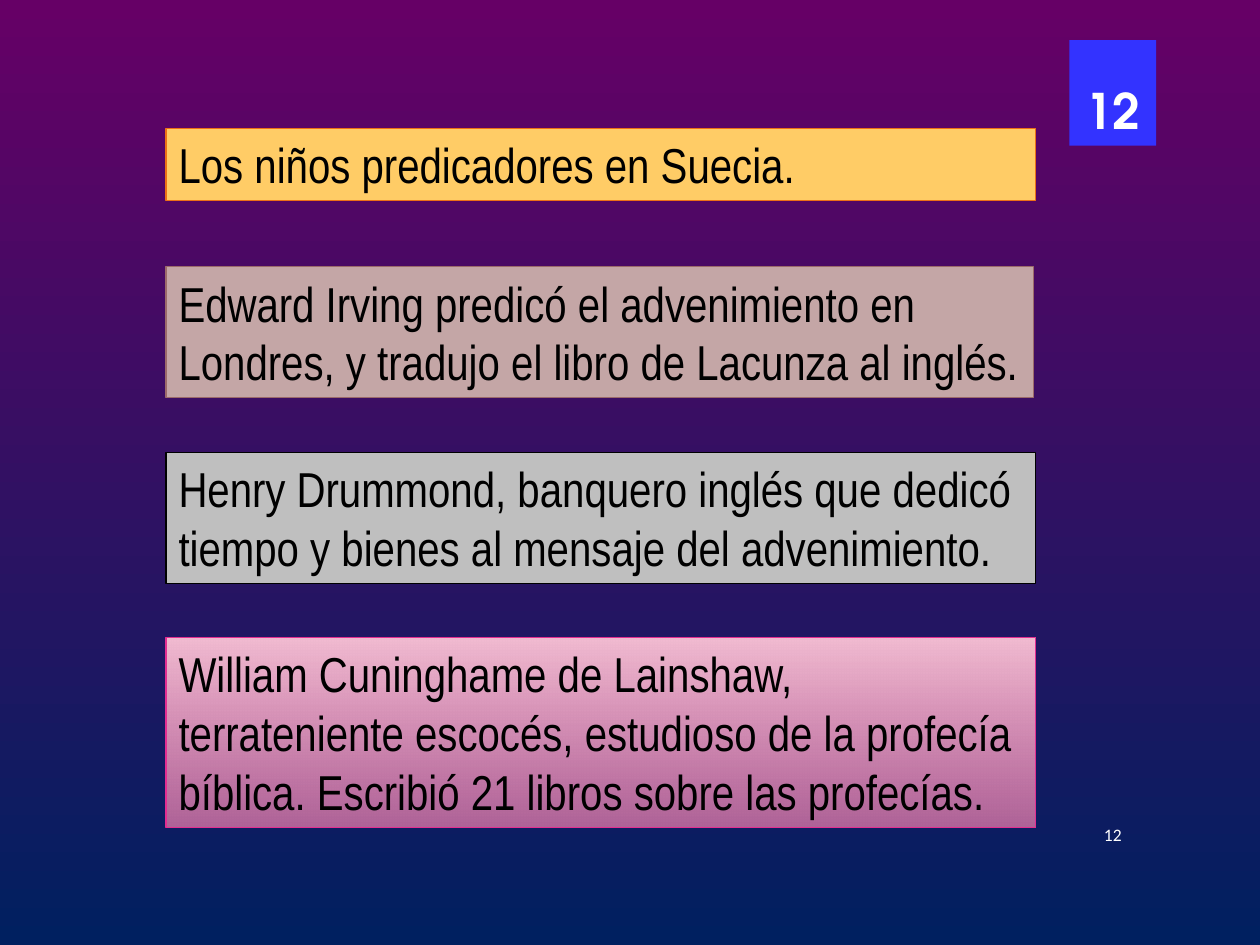
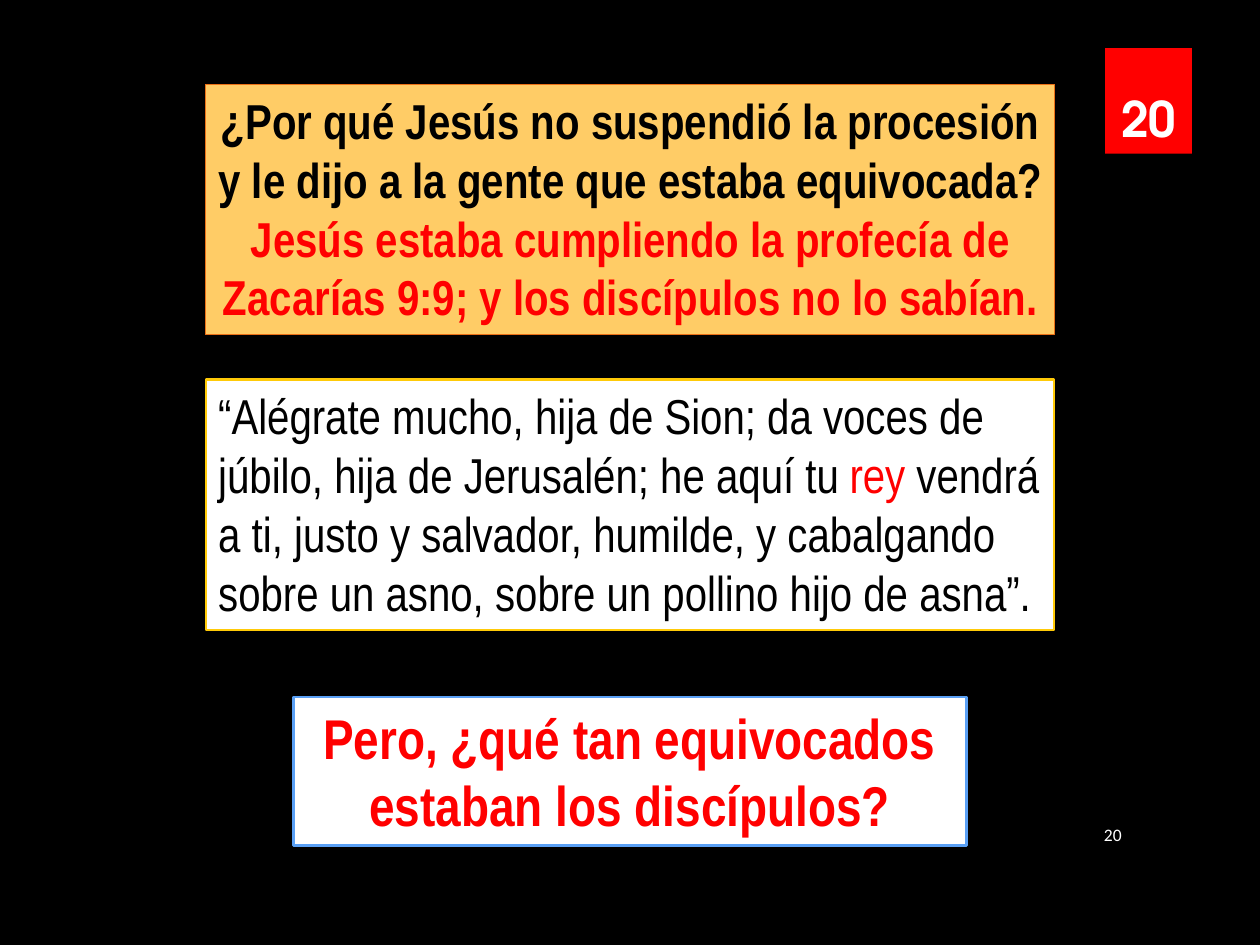
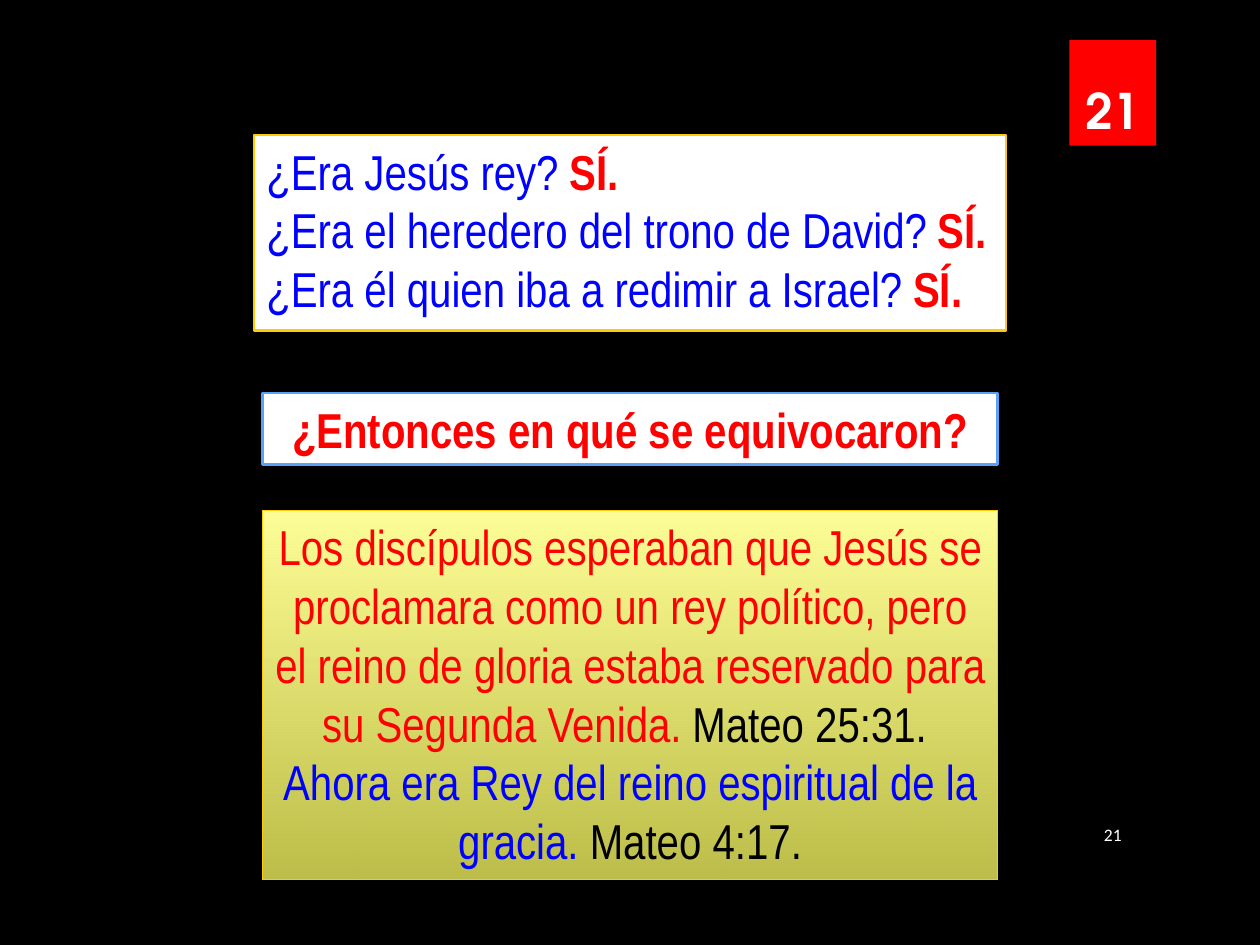
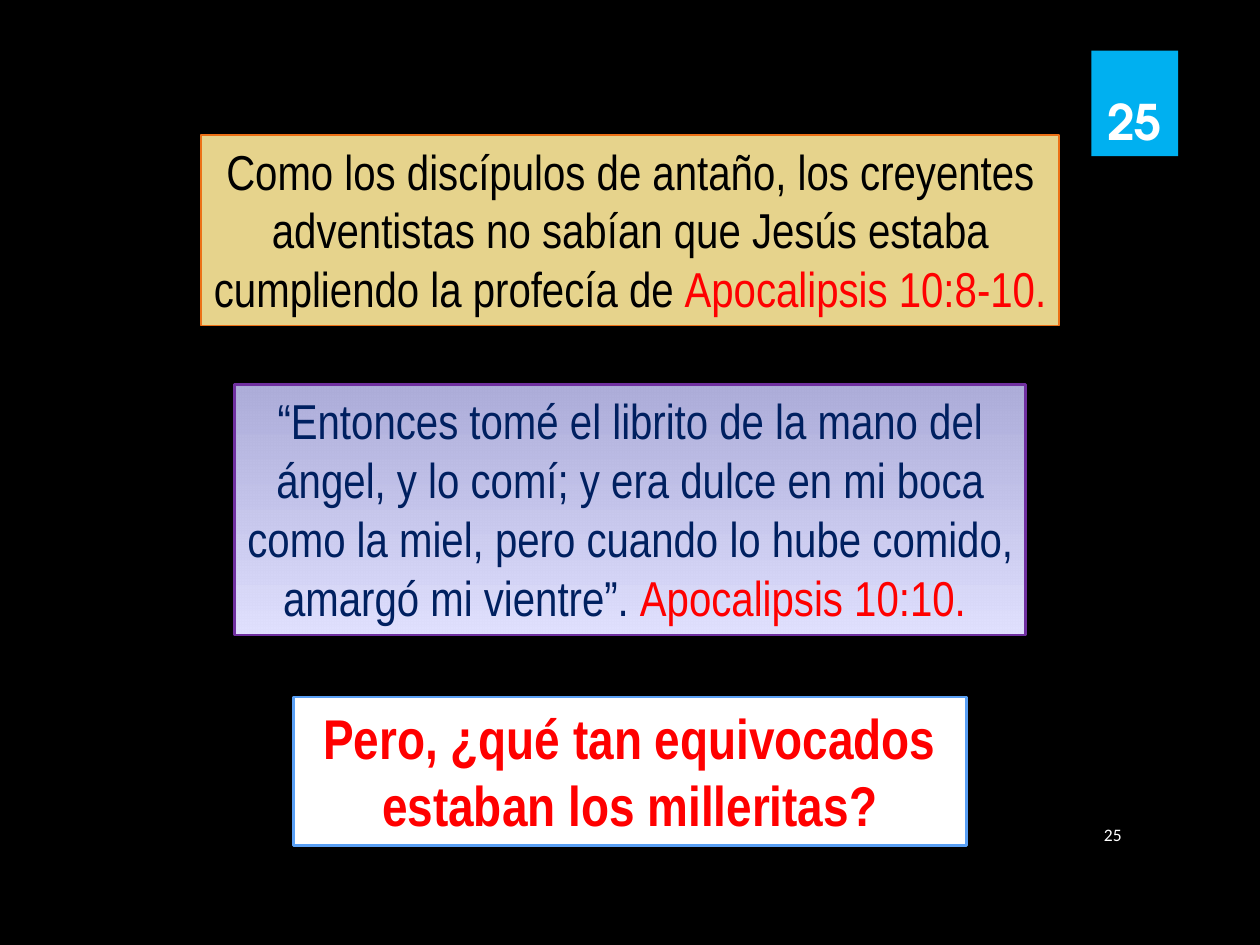
from lxml import etree
from pptx import Presentation
from pptx.dml.color import RGBColor
from pptx.enum.shapes import MSO_SHAPE
from pptx.enum.text import MSO_ANCHOR, MSO_AUTO_SIZE, PP_ALIGN
from pptx.oxml.ns import qn
from pptx.util import Cm, Pt

RECTANGLE = MSO_SHAPE.RECTANGLE
TOP, MIDDLE, BOTTOM = MSO_ANCHOR.TOP, MSO_ANCHOR.MIDDLE, MSO_ANCHOR.BOTTOM
LEFT, CENTER, RIGHT = PP_ALIGN.LEFT, PP_ALIGN.CENTER, PP_ALIGN.RIGHT
GROW = MSO_AUTO_SIZE.SHAPE_TO_FIT_TEXT

SLIDE_WIDTH, SLIDE_HEIGHT = 25.4, 19.05
BODY_FONT, NUMBER_FONT, BADGE_FONT = "Arial Narrow", "Calibri", "TeX Gyre Adventor"
DOWNWARD = 270
BLANK_LAYOUT = 6

COLORS = {
    "black": "000000", "white": "FFFFFF", "red": "FF0000", "blue": "0000FF",
    "navy": "002060", "purple": "660066", "violet": "7030A0", "royal": "3333FF",
    "cyan": "00B0F0", "sky": "5AA0F5", "amber": "FFCC66", "orange": "EC7016",
    "gold": "FFCA08", "cream": "FFEA9C", "rose": "C4A6A6", "brown": "9C6A6A",
    "gray": "BFBFBF", "magenta": "E32D91", "light pink": "F2BBD1",
    "pink": "E87DAC", "light yellow": "FFFF99", "yellow": "FFFF66",
    "lavender": "CCCCFF", "light lavender": "E1E1FF",
}


def rgb(name):
    return RGBColor.from_string(COLORS[name])


def set_alpha(parent, percent):
    color = next(parent.iter(qn("a:srgbClr")))
    etree.SubElement(color, qn("a:alpha"), val=str(percent * 1000))


def paint(fill, stops):
    """Fill with one (color, opacity) pair, or with a downward gradient of two."""
    if len(stops) == 1:
        fill.solid()
        targets = [fill]
    else:
        fill.gradient()
        fill.gradient_angle = DOWNWARD
        targets = list(fill.gradient_stops)
    for position, (target, (color, opacity)) in enumerate(zip(targets, stops)):
        if len(stops) == 1:
            target.fore_color.rgb = rgb(color)
            node = target._xPr
        else:
            target.color.rgb = rgb(color)
            target.position = position
            node = target._gs
        if opacity < 100:
            set_alpha(node, opacity)


def solid(color, opacity=100):
    return [(color, opacity)]


def outline_text(run, color, width):
    outline = etree.Element(qn("a:ln"), w=str(Pt(width)))
    fill = etree.SubElement(outline, qn("a:solidFill"))
    etree.SubElement(fill, qn("a:srgbClr"), val=COLORS[color])
    run._r.get_or_add_rPr().insert(0, outline)


def add_run(paragraph, text, color, size, font=BODY_FONT, bold=False, outline=0):
    run = paragraph.add_run()
    run.text = text
    for attribute, value in {"name": font, "size": Pt(size), "bold": bold}.items():
        setattr(run.font, attribute, value)
    run.font.color.rgb = rgb(color)
    if outline:
        outline_text(run, color, outline)


def add_rectangle(slide, box, fill, border=None, border_width=0.75):
    rectangle = slide.shapes.add_shape(RECTANGLE, *map(Cm, box))
    rectangle.shadow.inherit = False
    paint(rectangle.fill, fill)
    if border:
        rectangle.line.color.rgb = rgb(border)
        rectangle.line.width = Pt(border_width)
    else:
        rectangle.line.fill.background()
    return rectangle


def format_frame(frame, **values):
    for attribute, value in {"word_wrap": True, **values}.items():
        setattr(frame, attribute, value)


def add_panel(slide, top, width, height, fill, border, paragraphs, left=None,
              border_width=0.75, align=CENTER, size=28, bold=False, outline=1.5):
    """Add a statement panel, centred across the slide unless left is given.

    Each paragraph is a list of (text, color) runs, with an optional bold flag.
    """
    if left is None:
        left = (SLIDE_WIDTH - width) / 2
    panel = add_rectangle(slide, (left, top, width, height), fill, border, border_width)
    frame = panel.text_frame
    format_frame(frame, vertical_anchor=TOP, auto_size=GROW)
    for index, runs in enumerate(paragraphs):
        paragraph = frame.add_paragraph() if index else frame.paragraphs[0]
        paragraph.alignment = align
        for text, color, *emphasis in runs:
            add_run(paragraph, text, color, size, bold=bold or bool(emphasis),
                    outline=outline)


def add_question(slide, text, top=14.05, width=13.56, height=3, size=32):
    add_panel(slide, top, width, height, solid("white"), "sky", [[(text, "red")]],
              border_width=1.5, size=size, bold=True)


def add_page_marks(slide, number, badge_left, badge_top, badge_color):
    """Add the small page number and the coloured number badge."""
    page_number = slide.shapes.add_textbox(*map(Cm, (21.69, 16.31, 1.17, 1.04)))
    badge = add_rectangle(slide, (badge_left, badge_top, 1.75, 2.13), solid(badge_color))
    marks = ((page_number, MIDDLE, RIGHT, 10, NUMBER_FONT, False),
             (badge, BOTTOM, CENTER, 28, BADGE_FONT, True))
    for mark, anchor, align, size, font, bold in marks:
        format_frame(mark.text_frame, vertical_anchor=anchor)
        paragraph = mark.text_frame.paragraphs[0]
        paragraph.alignment = align
        add_run(paragraph, str(number), "white", size, font, bold)


def add_slide(prs, background):
    slide = prs.slides.add_slide(prs.slide_layouts[BLANK_LAYOUT])
    paint(slide.background.fill, background)
    return slide


def build_preachers(prs):
    slide = add_slide(prs, [("purple", 100), ("navy", 100)])
    preachers = (
        (2.59, 17.53, 1.45, solid("amber"), "orange",
         "Los niños predicadores en Suecia."),
        (5.38, 17.48, 2.64, solid("rose"), "brown",
         "Edward Irving predicó el advenimiento en Londres, y tradujo el libro "
         "de Lacunza al inglés."),
        (9.12, 17.53, 2.64, solid("gray"), "black",
         "Henry Drummond, banquero inglés que dedicó tiempo y bienes al mensaje "
         "del advenimiento."),
        (12.85, 17.53, 3.84, [("light pink", 100), ("pink", 74)], "magenta",
         "William Cuninghame de Lainshaw, terrateniente escocés, estudioso de la "
         "profecía bíblica. Escribió 21 libros sobre las profecías."),
    )
    for top, width, height, fill, border, text in preachers:
        add_panel(slide, top, width, height, fill, border, [[(text, "black")]],
                  left=3.35, align=LEFT)
    add_page_marks(slide, 12, 21.56, 0.81, "royal")


def build_procession(prs):
    slide = add_slide(prs, solid("black"))
    add_panel(slide, 1.7, 17.12, 5.05, solid("amber"), "orange", [[
        ("¿Por qué Jesús no suspendió la procesión y le dijo a la gente que "
         "estaba equivocada? ", "black"),
        ("Jesús estaba cumpliendo la profecía de Zacarías 9:9; y los discípulos "
         "no lo sabían.", "red"),
    ]], bold=True, outline=0.25)
    add_panel(slide, 7.65, 17.1, 5.05, solid("white"), "gold", [[
        ("“Alégrate mucho, hija de Sion; da voces de júbilo, hija de Jerusalén; "
         "he aquí tu ", "black"),
        ("rey", "red"),
        (" vendrá a ti, justo y salvador, humilde, y cabalgando sobre un asno, "
         "sobre un pollino hijo de asna”.", "black"),
    ]], border_width=1.5, align=LEFT)
    add_question(slide, "Pero, ¿qué tan equivocados estaban los discípulos?")
    add_page_marks(slide, 20, 22.28, 0.97, "red")


def build_kingdom(prs):
    slide = add_slide(prs, solid("black"))
    questions = ("¿Era Jesús rey? ", "¿Era el heredero del trono de David? ",
                 "¿Era él quien iba a redimir a Israel? ")
    add_panel(slide, 2.72, 15.16, 3.94, solid("white"), "gold",
              [[(question, "blue"), ("SÍ.", "red", True)] for question in questions],
              border_width=1.5, align=LEFT)
    add_question(slide, "¿Entonces en qué se equivocaron?", 7.92, 14.81, 1.45, 28)
    add_panel(slide, 10.29, 14.81, 7.44, [("light yellow", 100), ("yellow", 74)], "gold", [
        [("Los discípulos esperaban que Jesús se proclamara como un rey político, "
          "pero el reino de gloria estaba reservado para su Segunda Venida. ", "red"),
         ("Mateo 25:31. ", "black")],
        [("Ahora era Rey del reino espiritual de la gracia. ", "blue"),
         ("Mateo 4:17.", "black")],
    ])
    add_page_marks(slide, 21, 21.56, 0.81, "red")


def build_little_book(prs):
    slide = add_slide(prs, solid("black"))
    add_panel(slide, 2.72, 17.3, 3.84, solid("cream", 90), "orange", [[
        ("Como los discípulos de antaño, los creyentes adventistas no sabían que "
         "Jesús estaba cumpliendo la profecía de ", "black"),
        ("Apocalipsis 10:8-10.", "red"),
    ]])
    add_panel(slide, 7.75, 15.95, 5.05, [("lavender", 85), ("light lavender", 100)],
              "violet", [[
                  ("“Entonces tomé el librito de la mano del ángel, y lo comí; y era "
                   "dulce en mi boca como la miel, pero cuando lo hube comido, amargó "
                   "mi vientre”. ", "navy"),
                  ("Apocalipsis 10:10. ", "red"),
              ]], border_width=1.5)
    add_question(slide, "Pero, ¿qué tan equivocados estaban los milleritas?")
    add_page_marks(slide, 25, 22, 1.02, "cyan")


def main():
    prs = Presentation()
    prs.slide_width, prs.slide_height = Cm(SLIDE_WIDTH), Cm(SLIDE_HEIGHT)
    for build in (build_preachers, build_procession, build_kingdom, build_little_book):
        build(prs)
    prs.save("out.pptx")


if __name__ == "__main__":
    main()
